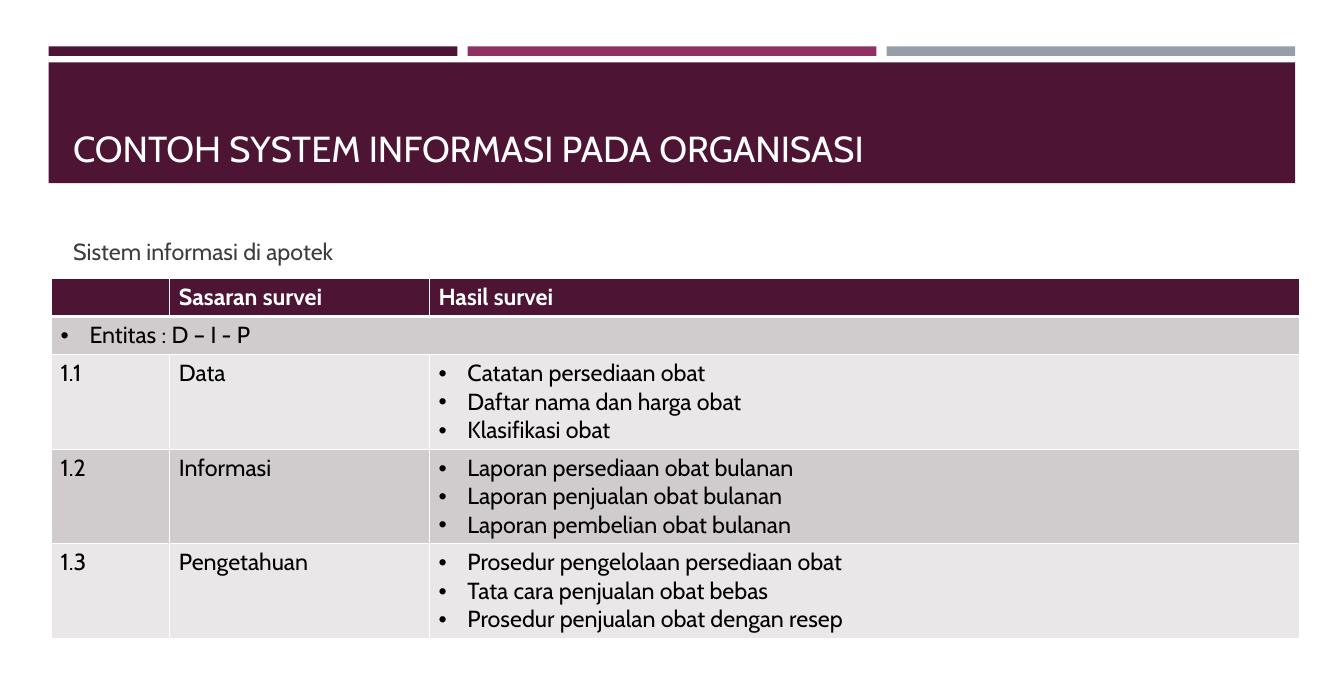
import pptx
import pptx.dml.color
import pptx.enum.shapes
import pptx.enum.text
import pptx.oxml
import pptx.oxml.ns
import pptx.util
from pptx.util import Cm

FONT = "Cabin"
COLOURS = {
    "plum": "4D1434", "magenta": "903163", "grey": "969FA7", "white": "FFFFFF",
    "subtitle": "3D3D3D", "black": "000000", "dark band": "D0CCCE", "light band": "E9E7E8",
}
HEADINGS = ["", "Sasaran survei", "Hasil survei"]
ENTITY = "Entitas : D – I - P"
SURVEY = [
    ("1.1", "Data",
     ["Catatan persediaan obat", "Daftar nama dan harga obat", "Klasifikasi obat"]),
    ("1.2", "Informasi",
     ["Laporan persediaan obat bulanan", "Laporan penjualan obat bulanan",
      "Laporan pembelian obat bulanan"]),
    ("1.3", "Pengetahuan",
     ["Prosedur pengelolaan persediaan obat", "Tata cara penjualan obat bebas",
      "Prosedur penjualan obat dengan resep"]),
]
COLUMN_WIDTHS = [3.23, 7.09, 23.77]
ROW_HEIGHTS = [1.04, 1.04] + [2.58] * len(SURVEY)


def rgb(name):
    return pptx.dml.color.RGBColor.from_string(COLOURS[name])


def style(para, size, colour, bold=False):
    para.font.name = FONT
    para.font.size = pptx.util.Pt(size)
    para.font.bold = bold
    para.font.color.rgb = rgb(colour)


def add_block(page, left, top, width, height, colour):
    block = page.shapes.add_shape(
        pptx.enum.shapes.MSO_SHAPE.RECTANGLE, Cm(left), Cm(top), Cm(width), Cm(height))
    block.shadow.inherit = False
    block.fill.solid()
    block.fill.fore_color.rgb = rgb(colour)
    block.line.fill.background()


def add_label(page, left, top, width, height, text, size, colour, anchor):
    box = page.shapes.add_textbox(Cm(left), Cm(top), Cm(width), Cm(height))
    frame = box.text_frame
    frame.word_wrap = True
    frame.vertical_anchor = anchor
    frame.text = text
    style(frame.paragraphs[0], size, colour)


def add_header(page, left, top, width, height):
    """Three accent bars above a title band."""
    gap = 0.28
    bar_width = (width - 2 * gap) / 3
    for index, colour in enumerate(["plum", "magenta", "grey"]):
        add_block(page, left + index * (bar_width + gap), top, bar_width, 0.26, colour)
    band_offset = 0.43
    add_block(page, left, top + band_offset, width, height - band_offset, "plum")
    add_label(page, left + 0.42, top + 0.69, width - 0.84, height - 0.92,
              "CONTOH SYSTEM INFORMASI PADA ORGANISASI", 28, "white",
              pptx.enum.text.MSO_ANCHOR.BOTTOM)


def add_bullet(para):
    properties = para._p.get_or_add_pPr()
    properties.set("marL", str(Cm(0.79)))
    properties.set("indent", str(-Cm(0.79)))
    for tag, attribute, value in [("buFont", "typeface", "Arial"), ("buChar", "char", "•")]:
        properties.insert_element_before(
            pptx.oxml.parse_xml(
                f'<a:{tag} {pptx.oxml.ns.nsdecls("a")} {attribute}="{value}"/>'),
            "a:defRPr")


def set_borders(cell, top, bottom):
    widths = {"lnL": 1, "lnR": 1, "lnT": top, "lnB": bottom}
    for index, (tag, width) in enumerate(widths.items()):
        cell._tc.get_or_add_tcPr().insert(index, pptx.oxml.parse_xml(
            f'<a:{tag} {pptx.oxml.ns.nsdecls("a")} w="{pptx.util.Pt(width)}">'
            f'<a:solidFill><a:srgbClr val="{COLOURS["white"]}"/></a:solidFill></a:{tag}>'))


def fill_cell(cell, content, row):
    """Write a string, or a list as bullets, in the style of the row."""
    header = row == 0
    bulleted = isinstance(content, list)
    cell.fill.solid()
    cell.fill.fore_color.rgb = rgb(
        "plum" if header else "dark band" if row % 2 else "light band")
    set_borders(cell, top=3 if row == 1 else 1, bottom=3 if header else 1)
    cell.text = "\n".join(content) if bulleted else content
    for para in cell.text_frame.paragraphs:
        style(para, 18, "white" if header else "black", bold=header)
        if bulleted:
            add_bullet(para)


def add_survey_table(page, left, top):
    rows = [HEADINGS, ([ENTITY], "", ""), *SURVEY]
    table = page.shapes.add_table(
        len(rows), len(HEADINGS), Cm(left), Cm(top),
        Cm(sum(COLUMN_WIDTHS)), Cm(sum(ROW_HEIGHTS))).table
    for column, width in zip(table.columns, COLUMN_WIDTHS):
        column.width = Cm(width)
    for row, height in zip(table.rows, ROW_HEIGHTS):
        row.height = Cm(height)
    for row, contents in enumerate(rows):
        for column, content in enumerate(contents):
            fill_cell(table.cell(row, column), content, row)
    table.cell(1, 0).merge(table.cell(1, len(HEADINGS) - 1))


def main():
    deck = pptx.Presentation()
    deck.slide_width, deck.slide_height = Cm(36.7), Cm(19.05)
    page = deck.slides.add_slide(deck.slide_layouts[6])
    add_header(page, left=1.33, top=1.27, width=34.04, height=3.73)
    add_label(page, 1.75, 6.3, 33.2, 1.1, "Sistem informasi di apotek", 18, "subtitle",
              pptx.enum.text.MSO_ANCHOR.MIDDLE)
    add_survey_table(page, left=1.4, top=7.6)
    deck.save("out.pptx")


if __name__ == "__main__":
    main()
